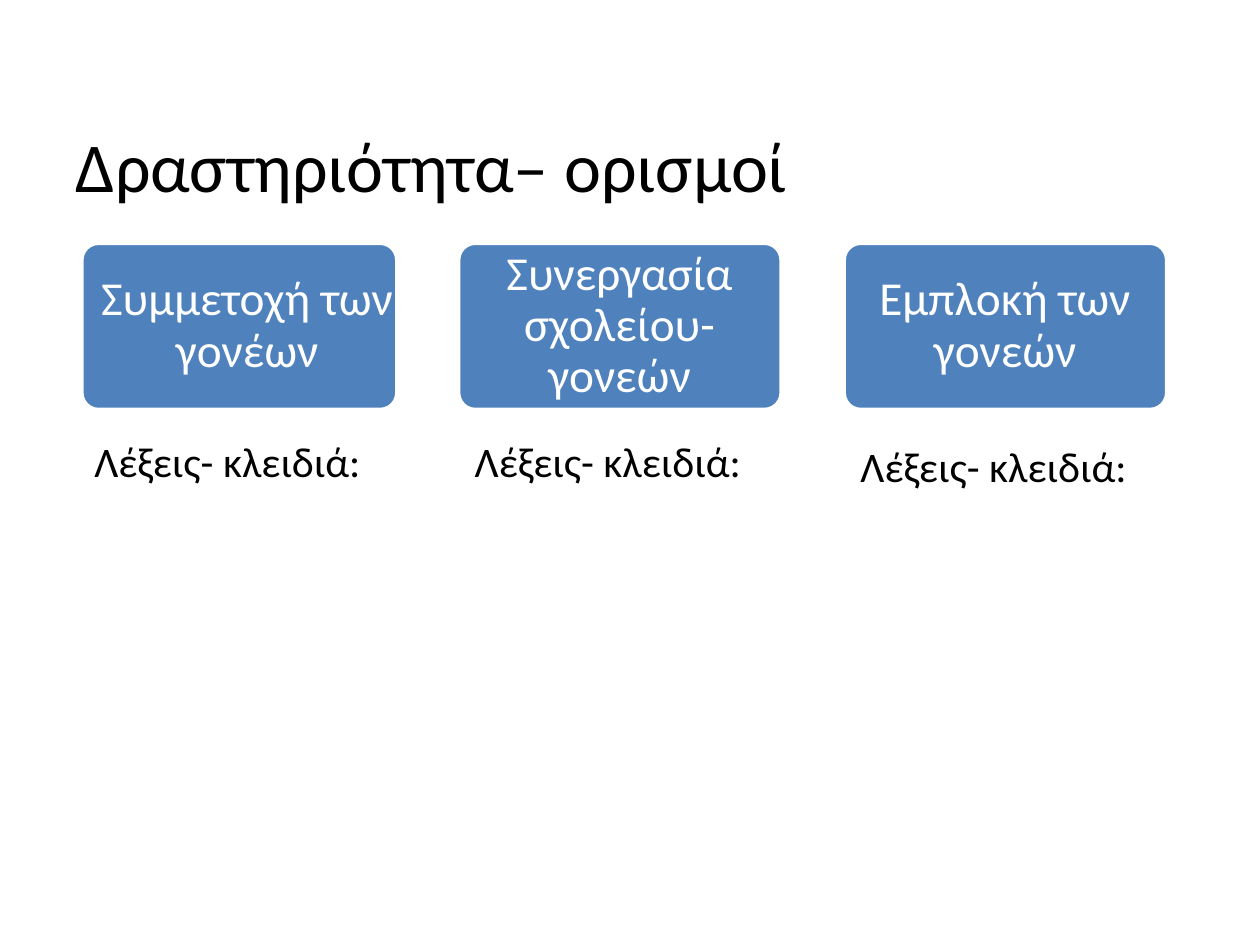
from pptx import Presentation
from pptx.dml.color import RGBColor
from pptx.enum.shapes import MSO_SHAPE
from pptx.enum.text import MSO_ANCHOR, PP_ALIGN
from pptx.util import Pt

COLORS = {"ink": "000000", "card": "4F81BD", "paper": "FFFFFF"}


class DefinitionSlide:
    font = "Calibri"

    def __init__(self, deck):
        self.slide = deck.slides.add_slide(deck.slide_layouts[5])

    def set_text(self, frame, text, size, color, align=PP_ALIGN.LEFT):
        frame.word_wrap = True
        frame.text = text
        paragraph = frame.paragraphs[0]
        paragraph.alignment = align
        font = paragraph.runs[0].font
        font.name, font.size = self.font, Pt(size)
        font.color.rgb = RGBColor.from_string(COLORS[color])
        return paragraph

    def title(self, text, left, top, width, height):
        heading = self.slide.shapes.title
        heading.left, heading.top = Pt(left), Pt(top)
        heading.width, heading.height = Pt(width), Pt(height)
        heading.text_frame.vertical_anchor = MSO_ANCHOR.MIDDLE
        self.set_text(heading.text_frame, text, 40, "ink")

    def textbox(self, left, top, width, height):
        box = self.slide.shapes.add_textbox(Pt(left), Pt(top), Pt(width), Pt(height))
        return box.text_frame

    def card(self, left, top, width, height):
        card = self.slide.shapes.add_shape(
            MSO_SHAPE.ROUNDED_RECTANGLE, Pt(left), Pt(top), Pt(width), Pt(height))
        card.adjustments[0] = 0.1
        card.shadow.inherit = False
        card.fill.solid()
        card.fill.fore_color.rgb = RGBColor.from_string(COLORS["card"])
        card.line.color.rgb = RGBColor.from_string(COLORS["paper"])
        card.line.width = Pt(2)

    def term(self, text, left, top, width, height):
        frame = self.textbox(left, top, width, height)
        frame.margin_left = frame.margin_right = Pt(8)
        frame.margin_top = frame.margin_bottom = Pt(8)
        frame.vertical_anchor = MSO_ANCHOR.MIDDLE
        paragraph = self.set_text(frame, text, 27, "paper", PP_ALIGN.CENTER)
        paragraph.line_spacing = 0.9

    def keywords(self, text, left, top, width, height):
        frame = self.textbox(left, top, width, height)
        paragraph = self.set_text(frame, text, 24, "ink")
        paragraph.space_after = Pt(12)


def main():
    deck = Presentation()
    deck.slide_width, deck.slide_height = Pt(720), Pt(540)
    page = DefinitionSlide(deck)

    # Heading
    page.title("Δραστηριότητα– ορισμοί", 36, 49, 648, 90)

    # Term, card left, card width, term width, keywords left, keywords top
    columns = [
        ("Συμμετοχή των γονέων", 46.8, 180, 184.3, 46.8, 245.5),
        ("Συνεργασία σχολείου-γονεών", 262.1, 184.3, 179.3, 264.2, 245.5),
        ("Εμπλοκή των γονεών", 482.4, 184.3, 179.3, 484.6, 248.4),
    ]
    for term, left, card_width, term_width, keywords_left, keywords_top in columns:
        page.card(left, 139, card_width, 95)
        page.term(term, left + 2.2, 141.8, term_width, 89.3)
        page.keywords("Λέξεις- κλειδιά:", keywords_left, keywords_top, 186.5, 36)

    deck.save("out.pptx")


if __name__ == "__main__":
    main()
